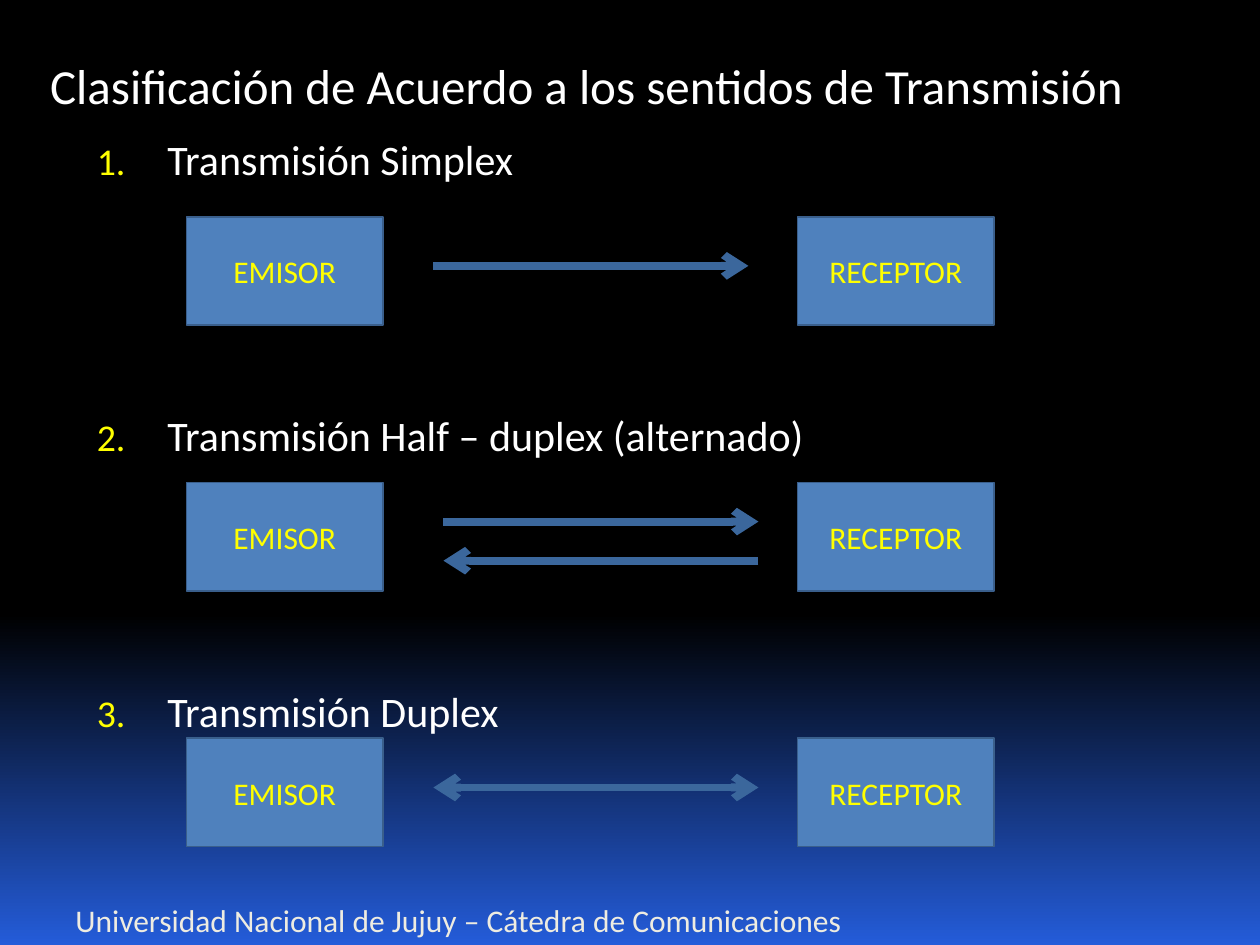
from copy import deepcopy
from dataclasses import dataclass

from pptx import Presentation
from pptx import util as u
from pptx.dml.color import RGBColor
from pptx.enum import shapes, text
from pptx.oxml.ns import qn
from lxml import etree

BLACK = RGBColor(0x00, 0x00, 0x00)
WHITE = RGBColor(0xFF, 0xFF, 0xFF)
CREAM = RGBColor(0xEE, 0xEC, 0xE1)
YELLOW = RGBColor(0xFF, 0xFF, 0x00)
BLUE = RGBColor(0x24, 0x5C, 0xD9)
FILL = RGBColor(0x4F, 0x81, 0xBD)
EDGE = RGBColor(0x3A, 0x5F, 0x8C)
ARROW = RGBColor(0x3B, 0x67, 0x9C)
FONT = "Calibri"


@dataclass
class Arrow:
    start: float
    end: float
    y: float
    both: bool = False


@dataclass
class Mode:
    name: str
    top: float
    arrows: list[Arrow]


TITLE = "Clasificación de Acuerdo a los sentidos de Transmisión"
FOOTER = "Universidad Nacional de Jujuy – Cátedra de Comunicaciones"
MODES = [
    Mode("Transmisión Simplex", 1.72, [Arrow(3.44, 5.94, 2.11)]),
    Mode("Transmisión Half – duplex (alternado)", 3.83,
         [Arrow(3.52, 6.02, 4.14), Arrow(6.02, 3.52, 4.45)]),
    Mode("Transmisión Duplex", 5.86, [Arrow(3.44, 6.02, 6.25, both=True)]),
]
ENDS = {"EMISOR": 1.48, "RECEPTOR": 6.33}


def style(para, size: int, color: RGBColor) -> None:
    para.font.name = FONT
    para.font.size = u.Pt(size)
    para.font.color.rgb = color


def indent(para, left: float, hang: float):
    props = para._p.get_or_add_pPr()
    props.set("marL", str(u.Inches(left)))
    props.set("indent", str(-u.Inches(hang)))
    return props


def number(props) -> None:
    color = etree.SubElement(props, qn("a:buClr"))
    etree.SubElement(color, qn("a:srgbClr"), val=str(YELLOW))
    etree.SubElement(props, qn("a:buSzPct"), val="90000")
    etree.SubElement(props, qn("a:buFont"), typeface=FONT)
    etree.SubElement(props, qn("a:buAutoNum"), type="arabicPeriod")


def add_text(slide, left: float, top: float, width: float, height: float):
    box = slide.shapes.add_textbox(
        u.Inches(left), u.Inches(top), u.Inches(width), u.Inches(height))
    box.text_frame.word_wrap = True
    return box.text_frame


def add_box(slide, label: str, left: float, top: float) -> None:
    box = slide.shapes.add_shape(
        shapes.MSO_SHAPE.RECTANGLE, u.Inches(left), u.Inches(top),
        u.Inches(1.56), u.Inches(0.86))
    box.shadow.inherit = False
    box.fill.solid()
    box.fill.fore_color.rgb = FILL
    box.line.color.rgb = EDGE
    box.line.width = u.Pt(1)
    frame = box.text_frame
    frame.vertical_anchor = text.MSO_ANCHOR.MIDDLE
    para = frame.paragraphs[0]
    para.text = label
    para.alignment = text.PP_ALIGN.CENTER
    style(para, 18, YELLOW)


def add_arrow(slide, arrow: Arrow) -> None:
    y = u.Inches(arrow.y)
    line = slide.shapes.add_connector(
        shapes.MSO_CONNECTOR.STRAIGHT,
        u.Inches(arrow.start), y, u.Inches(arrow.end), y)
    line.line.color.rgb = ARROW
    line.line.width = u.Pt(4.5)
    stroke = line.line._get_or_add_ln()
    if arrow.both:
        etree.SubElement(stroke, qn("a:headEnd"), type="arrow")
    etree.SubElement(stroke, qn("a:tailEnd"), type="arrow")
    etree.SubElement(line._element.spPr, qn("a:effectLst"))


def add_back(slide) -> None:
    fill = slide.background.fill
    fill.gradient()
    fill.gradient_angle = 270
    black, blue = fill.gradient_stops
    black.color.rgb, black.position = BLACK, 0
    blue.color.rgb, blue.position = BLUE, 1
    # Black holds until 65 %
    first = slide.element.xpath(".//a:gs")[0]
    hold = deepcopy(first)
    hold.set("pos", "65000")
    first.addnext(hold)


def add_body(slide) -> None:
    frame = add_text(slide, 0.23, 0.39, 9.45, 5.7)
    head = frame.paragraphs[0]
    head.text = TITLE
    style(head, 28, WHITE)
    head.space_before, head.space_after = u.Pt(7), u.Pt(6)
    indent(head, 0.45, 0.38)
    for i, mode in enumerate(MODES):
        para = frame.add_paragraph()
        para.text = mode.name
        para.level = 1
        style(para, 24, WHITE)
        # Room for the diagram above every item but the first
        para.space_before = u.Pt(123 if i else 5)
        para.space_after = u.Pt(6)
        number(indent(para, 1, 0.56))


def main() -> None:
    deck = Presentation()
    deck.slide_width, deck.slide_height = u.Inches(10), u.Inches(7.5)
    slide = deck.slides.add_slide(deck.slide_layouts[6])
    add_back(slide)

    # Footer
    frame = add_text(slide, 0.5, 7.1, 9.25, 0.4)
    frame.vertical_anchor = text.MSO_ANCHOR.BOTTOM
    frame.paragraphs[0].text = FOOTER
    style(frame.paragraphs[0], 18, CREAM)

    # Title and numbered list
    add_body(slide)

    # Diagrams
    for mode in MODES:
        for label, left in ENDS.items():
            add_box(slide, label, left, mode.top)
        for arrow in mode.arrows:
            add_arrow(slide, arrow)

    deck.save("out.pptx")


if __name__ == "__main__":
    main()
